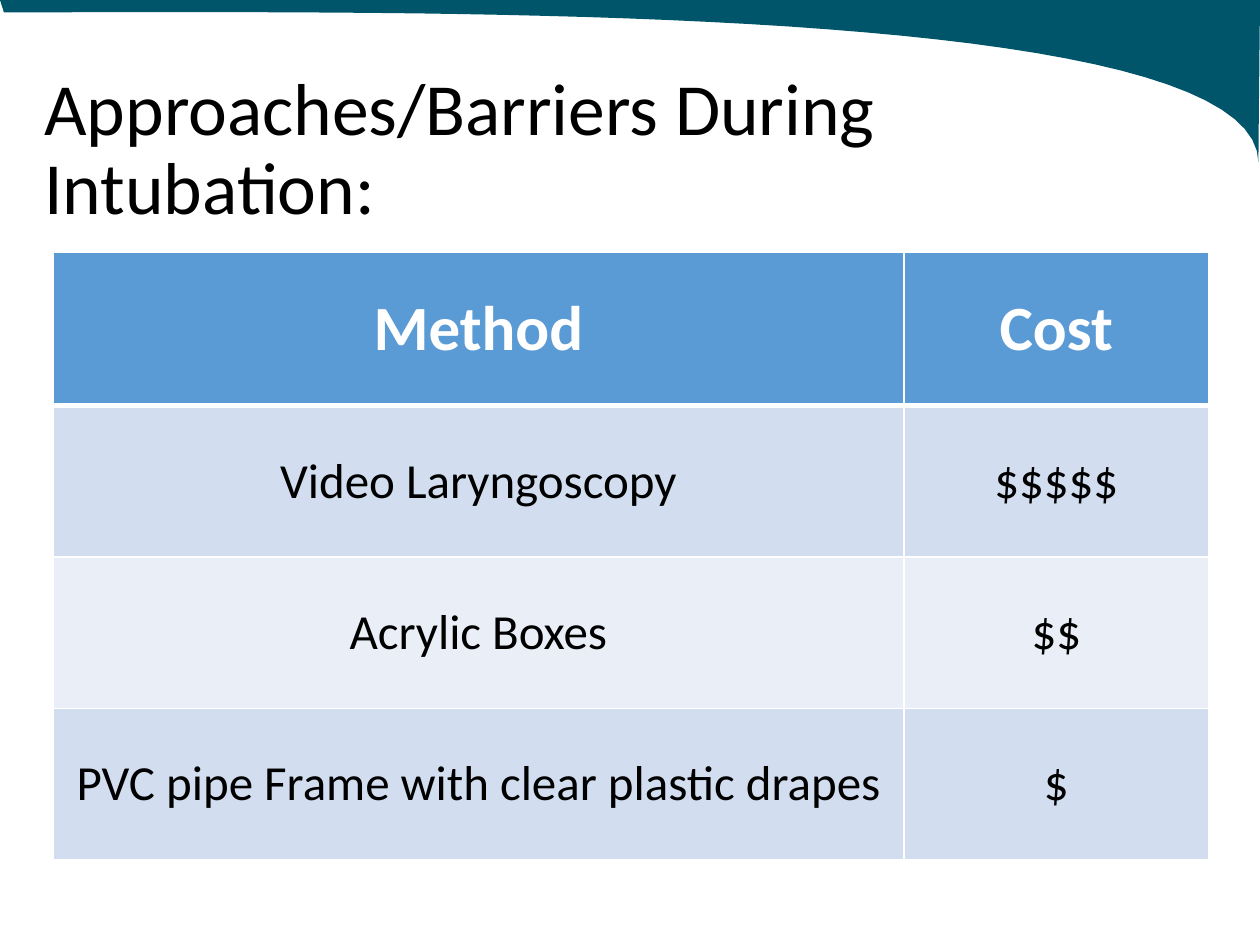
from pptx import Presentation
from pptx.dml.color import RGBColor
from pptx.enum import text
from pptx.oxml import parse_xml
from pptx.oxml.ns import nsdecls
from pptx.util import Cm, Pt

TITLE = "Approaches/Barriers During Intubation:"
ROWS = [
    ("Method", "Cost"),
    ("Video Laryngoscopy", "$$$$$"),
    ("Acrylic Boxes", "$$"),
    ("PVC pipe Frame with clear plastic drapes", "$"),
]
WIDTHS = (17.15, 6.15)
HEAD_H, BODY_H = 3.1, 3.05

TEAL = RGBColor(0x00, 0x55, 0x6A)
BLUE = RGBColor(0x5B, 0x9B, 0xD5)
PALE = RGBColor(0xD2, 0xDE, 0xEF)
MIST = RGBColor(0xEA, 0xEF, 0xF7)
BLACK = RGBColor(0, 0, 0)
WHITE = RGBColor(255, 255, 255)

# Swoosh edge: two Bezier curves, in cm
SIDE = [(25.4, 0), (25.4, 0.36), (25.37, 2.92), (25.37, 3.28)]
SWEEP = [(25.37, 3.28), (25.35, 0), (8.53, 0.25), (0.08, 0.25)]
STEPS = 40

HEAD = {"size": Pt(36), "bold": True, "color": WHITE}
BODY = {"size": Pt(28), "bold": False, "color": BLACK}


def curve(pts):
    """Return points along a cubic Bezier, without its start."""
    out = []
    for i in range(1, STEPS + 1):
        t = i / STEPS
        s = 1 - t
        mix = (s**3, 3 * s * s * t, 3 * s * t * t, t**3)
        out.append(tuple(Cm(sum(m * p[k] for m, p in zip(mix, pts)))
                         for k in (0, 1)))
    return out


def style(font, form):
    font.name = "Calibri"
    for key, val in form.items():
        if key == "color":
            font.color.rgb = val
        else:
            setattr(font, key, val)


def edge(cell, **sides):
    """Give the cell white borders; widths are in points."""
    prop = cell._tc.get_or_add_tcPr()
    for side in "LRTB":
        prop.append(parse_xml(
            f'<a:ln{side} {nsdecls("a")} w="{Pt(sides.get(side, 1))}">'
            f'<a:solidFill><a:srgbClr val="{WHITE}"/></a:solidFill>'
            f'</a:ln{side}>'))


def add_swoosh(slide):
    pen = slide.shapes.build_freeform(0, 0)
    pen.add_line_segments([(Cm(25.4), 0)] + curve(SIDE) + curve(SWEEP))
    shape = pen.convert_to_shape()
    shape.shadow.inherit = False
    shape.fill.solid()
    shape.fill.fore_color.rgb = TEAL
    shape.line.fill.background()
    slide.shapes._spTree.insert(2, shape._element)


def add_title(slide):
    box = slide.shapes.title
    place = {"left": 0.64, "top": 1.02, "width": 21.79, "height": 4.06}
    for key, val in place.items():
        setattr(box, key, Cm(val))
    frame = box.text_frame
    frame.text = TITLE
    frame.word_wrap = True
    frame.auto_size = text.MSO_AUTO_SIZE.NONE
    frame.vertical_anchor = text.MSO_ANCHOR.MIDDLE
    para = frame.paragraphs[0]
    para.alignment = text.PP_ALIGN.LEFT
    para.line_spacing = 0.9
    style(para.font, {"size": Pt(42), "color": BLACK})


def add_costs(slide):
    high = [HEAD_H] + [BODY_H] * (len(ROWS) - 1)
    table = slide.shapes.add_table(
        len(ROWS), len(WIDTHS), Cm(1.07), Cm(5.08),
        Cm(sum(WIDTHS)), Cm(sum(high))).table
    for col, wide in zip(table.columns, WIDTHS):
        col.width = Cm(wide)
    for r, row in enumerate(ROWS):
        table.rows[r].height = Cm(high[r])
        for c, word in enumerate(row):
            cell = table.cell(r, c)
            edge(cell, T=3 if r == 1 else 1, B=3 if r == 0 else 1)
            cell.fill.solid()
            cell.fill.fore_color.rgb = (
                BLUE if r == 0 else PALE if r % 2 else MIST)
            cell.vertical_anchor = text.MSO_ANCHOR.MIDDLE
            cell.text = word
            para = cell.text_frame.paragraphs[0]
            para.alignment = text.PP_ALIGN.CENTER
            style(para.runs[0].font, BODY if r else HEAD)


def main():
    deck = Presentation()
    deck.slide_width, deck.slide_height = Cm(25.4), Cm(19.05)
    slide = deck.slides.add_slide(deck.slide_layouts[5])
    add_swoosh(slide)
    add_title(slide)
    add_costs(slide)
    deck.save("out.pptx")


if __name__ == "__main__":
    main()
